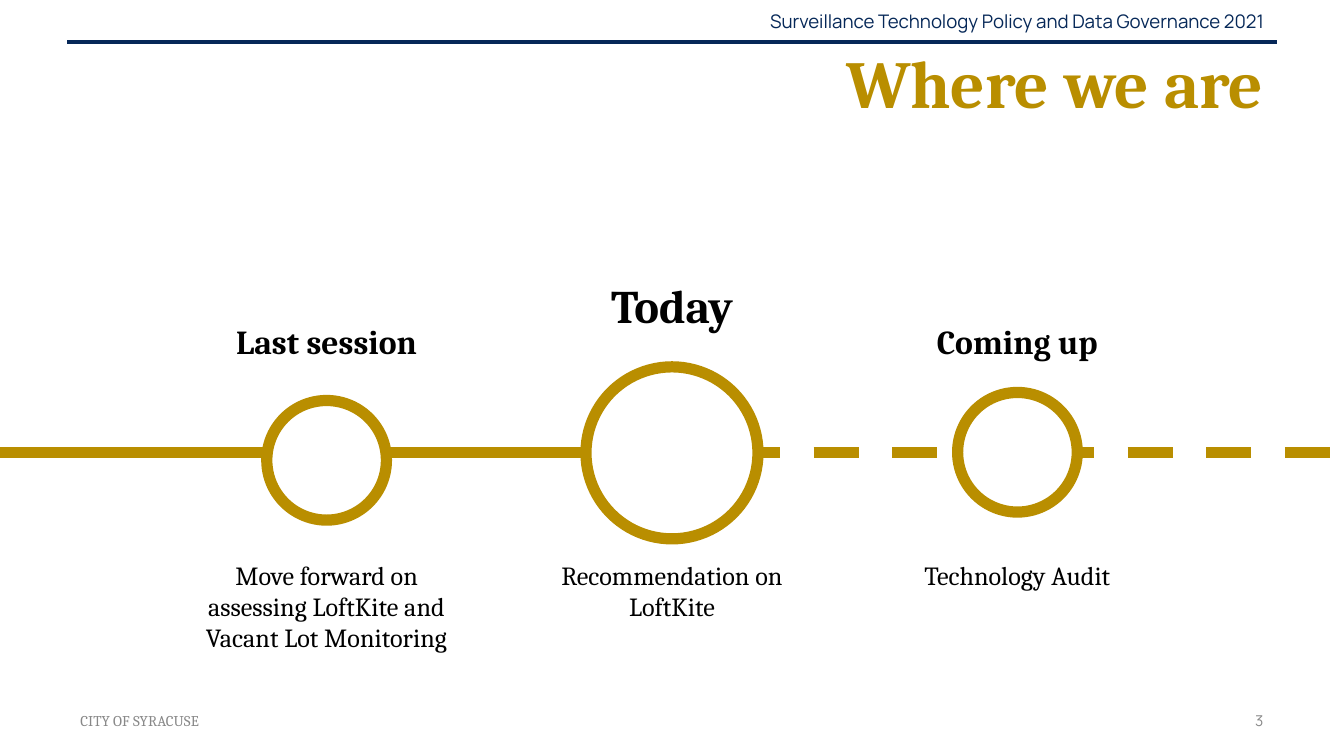
"""Build a slide with a three-step progress timeline."""
from lxml.etree import SubElement
from pptx import Presentation
from pptx.dml.color import RGBColor
from pptx.enum.dml import MSO_LINE
from pptx.enum.shapes import MSO_CONNECTOR, MSO_SHAPE
from pptx.enum.text import MSO_ANCHOR, MSO_AUTO_SIZE, PP_ALIGN
from pptx.oxml.ns import qn
from pptx.util import Inches, Pt

COLORS = {"navy": "062858", "gold": "B98E00", "gray": "888888",
          "black": "000000", "white": "FFFFFF"}
SERIF, SANS = "Cambria", "Manrope"
STEP_WIDTH = 2.12
STEPS = [
    {"left": 1.37, "heading": "Last session", "heading_top": 2.29, "size": 18,
     "detail": "Move forward on assessing LoftKite and Vacant Lot Monitoring",
     "detail_height": 0.91, "circle_top": 2.98, "diameter": 0.89},
    {"left": 3.94, "heading": "Today", "heading_top": 1.96, "size": 25,
     "detail": "Recommendation on LoftKite",
     "detail_height": 0.67, "circle_top": 2.73, "diameter": 1.28},
    {"left": 6.51, "heading": "Coming up", "heading_top": 2.29, "size": 18,
     "detail": "Technology Audit",
     "detail_height": 0.44, "circle_top": 2.92, "diameter": 0.89},
]


def color(name):
    """Return the named palette color."""
    return RGBColor.from_string(COLORS[name])


def format_text(shape, text, size, font, color_name, align, bold=False,
                anchor=MSO_ANCHOR.MIDDLE, inset=0.05):
    """Fill a shape with one formatted paragraph."""
    frame = shape.text_frame
    frame.text = text
    frame.word_wrap = True
    frame.auto_size = MSO_AUTO_SIZE.NONE
    frame.vertical_anchor = anchor
    frame.margin_left = frame.margin_right = Inches(0.1)
    frame.margin_top = frame.margin_bottom = Inches(inset)
    para = frame.paragraphs[0]
    para.alignment = align
    font_format = para.runs[0].font
    font_format.name = font
    font_format.size = Pt(size)
    font_format.bold = bold
    font_format.color.rgb = color(color_name)


def add_text(page, box, *args, **options):
    """Add a formatted text box in the given box."""
    format_text(page.shapes.add_textbox(*map(Inches, box)), *args, **options)


def add_line(page, left, right, top, color_name, width, dash=None):
    """Add a horizontal line without a shadow."""
    line = page.shapes.add_connector(
        MSO_CONNECTOR.STRAIGHT, Inches(left), Inches(top), Inches(right), Inches(top))
    line.line.color.rgb = color(color_name)
    line.line.width = Pt(width)
    if dash:
        line.line.dash_style = dash
    SubElement(line._element.spPr, qn("a:effectLst"))


def add_header(page, left, top, width):
    """Place the running head, its rule and the slide title."""
    right = left + width
    add_text(page, (right - 4.29, top, 4.29, 0.3),
             "Surveillance Technology Policy and Data Governance 2021",
             10, SANS, "navy", PP_ALIGN.RIGHT)
    add_line(page, left, right, top + 0.3, "navy", 2.25)
    title = page.shapes.title
    title.left, title.top = Inches(right - 4.5), Inches(top + 0.28)
    title.width, title.height = Inches(4.5), Inches(0.64)
    format_text(title, "Where we are", 36, SERIF, "gold", PP_ALIGN.RIGHT, bold=True)


def add_footer(page, left, top, width):
    """Place the owner at the left and the page number at the right."""
    add_text(page, (left, top, 2.33, 0.3), "CITY OF SYRACUSE",
             8, SERIF, "gray", PP_ALIGN.LEFT)
    add_text(page, (left + width - 2.33, top, 2.33, 0.3), "3",
             8, SANS, "gray", PP_ALIGN.RIGHT)


def add_step(page, step):
    """Place one step's circle, heading and detail on a shared center."""
    left, diameter = step["left"], step["diameter"]
    circle = page.shapes.add_shape(
        MSO_SHAPE.OVAL, Inches(left + (STEP_WIDTH - diameter) / 2),
        Inches(step["circle_top"]), Inches(diameter), Inches(diameter))
    circle.shadow.inherit = False
    circle.fill.solid()
    circle.fill.fore_color.rgb = color("white")
    circle.line.color.rgb = color("gold")
    circle.line.width = Pt(6)
    label = {"anchor": MSO_ANCHOR.TOP, "inset": 0.1}
    heading_height = 0.2 + step["size"] / 60
    add_text(page, (left, step["heading_top"], STEP_WIDTH, heading_height),
             step["heading"], step["size"], SERIF, "black", PP_ALIGN.CENTER,
             bold=True, **label)
    add_text(page, (left, 4.06, STEP_WIDTH, step["detail_height"]),
             step["detail"], 14, SERIF, "black", PP_ALIGN.CENTER, **label)


def add_timeline(page, left, top, width):
    """Place the solid past line, the dashed future line and the steps."""
    add_line(page, left, left + 4.36, top, "gold", 6)
    add_line(page, left + 5.47, left + width, top, "gold", 6, MSO_LINE.DASH)
    for step in STEPS:
        add_step(page, step)


def main():
    """Assemble and save the deck."""
    deck = Presentation()
    deck.slide_width = Inches(10)
    deck.slide_height = Inches(10 * 9 / 16)
    page = deck.slides.add_slide(deck.slide_layouts[5])
    add_header(page, 0.5, 0.01, 9)
    add_timeline(page, 0, 3.37, 10)
    add_footer(page, 0.5, 5.21, 9)
    deck.save("out.pptx")


if __name__ == "__main__":
    main()
